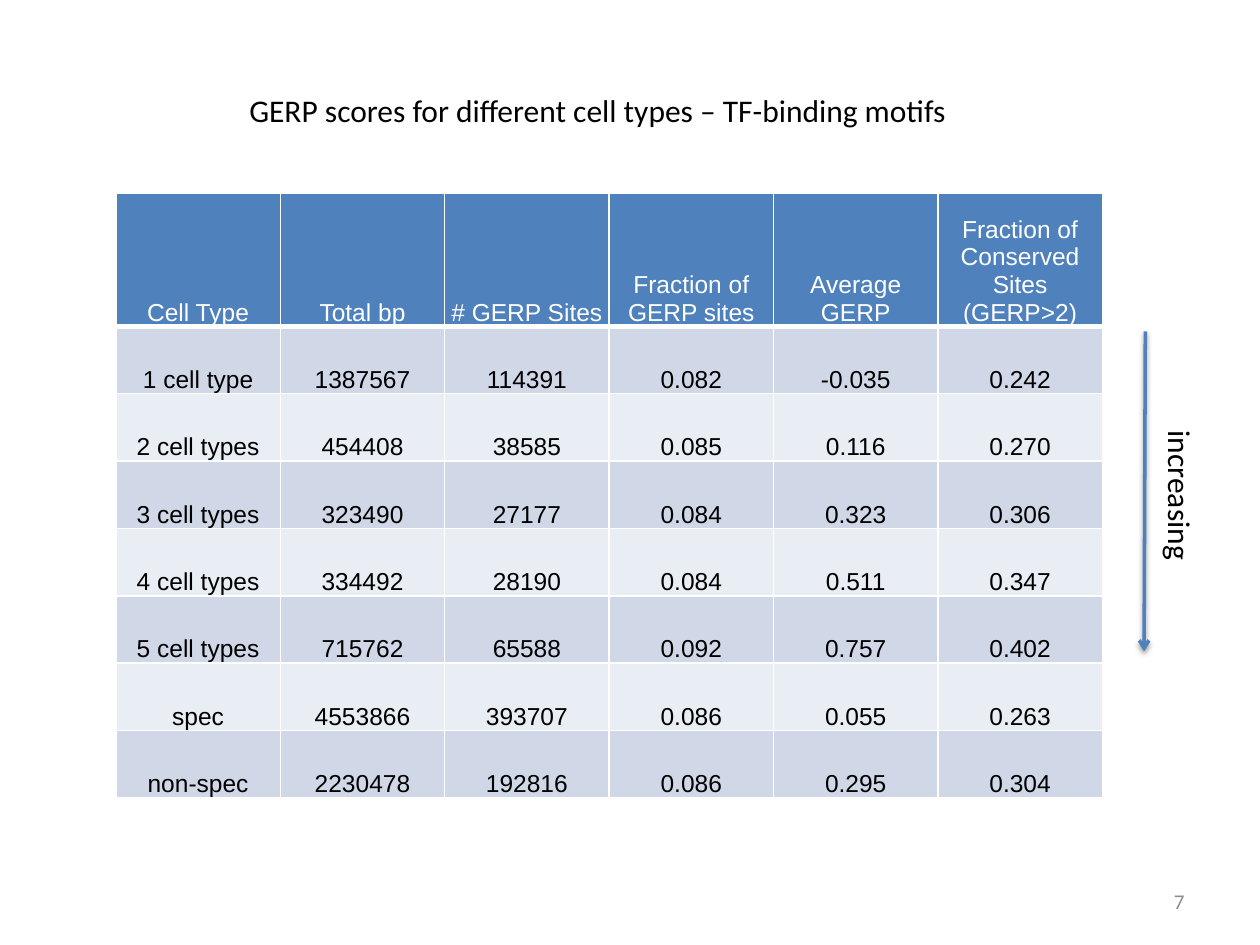
from dataclasses import dataclass

from lxml import etree
from pptx import Presentation
from pptx import util as u
from pptx.dml.color import RGBColor
from pptx.enum import shapes, text
from pptx.oxml import parse_xml
from pptx.oxml.ns import nsdecls, qn


@dataclass(frozen=True)
class Theme:
    accent: str = "4F81BD"
    bands: tuple = ("D0D8E8", "E9EDF4")
    white: str = "FFFFFF"
    black: str = "000000"
    grey: str = "8C8C8C"
    body_font: str = "Calibri"
    table_font: str = "Arial"
    label_size: int = 18
    table_size: int = 14
    number_size: int = 12


theme = Theme()
presentation = Presentation()
presentation.slide_width, presentation.slide_height = u.Inches(10), u.Inches(7.5)
slide = presentation.slides.add_slide(presentation.slide_layouts[6])


def add_run(paragraph, content, font, size, color):
    run = paragraph.add_run()
    run.text = content
    run.font.name, run.font.size = font, u.Pt(size)
    run.font.bold = False
    run.font.color.rgb = RGBColor.from_string(color)


def add_label(content, left, top, width, size, color, wrap=False):
    shape = slide.shapes.add_textbox(*map(u.Inches, (left, top, width, 0.4)))
    shape.text_frame.word_wrap = wrap
    add_run(shape.text_frame.paragraphs[0], content, theme.body_font, size, color)
    return shape


# Page number
number = add_label("7", 7.17, 6.95, 2.33, theme.number_size, theme.grey, wrap=True)
number.text_frame.vertical_anchor = text.MSO_ANCHOR.MIDDLE
number.text_frame.paragraphs[0].alignment = text.PP_ALIGN.RIGHT

# Table of GERP scores
rows = [
    ("Cell Type", "Total bp", "# GERP Sites", "Fraction of GERP sites",
     "Average GERP", "Fraction of Conserved Sites (GERP>2)"),
    ("1 cell type", "1387567", "114391", "0.082", "-0.035", "0.242"),
    ("2 cell types", "454408", "38585", "0.085", "0.116", "0.270"),
    ("3 cell types", "323490", "27177", "0.084", "0.323", "0.306"),
    ("4 cell types", "334492", "28190", "0.084", "0.511", "0.347"),
    ("5 cell types", "715762", "65588", "0.092", "0.757", "0.402"),
    ("spec", "4553866", "393707", "0.086", "0.055", "0.263"),
    ("non-spec", "2230478", "192816", "0.086", "0.295", "0.304"),
]
table_width, header_height, row_height = 7.83, 1.06, 0.535
table_height = header_height + row_height * (len(rows) - 1)
table = slide.shapes.add_table(
    len(rows), len(rows[0]),
    *map(u.Inches, (0.92, 1.53, table_width, table_height))).table
for column in table.columns:
    column.width = u.Inches(table_width / len(rows[0]))

for row_index, values in enumerate(rows):
    is_header = row_index == 0
    table.rows[row_index].height = u.Inches(header_height if is_header else row_height)
    fill = theme.accent if is_header else theme.bands[(row_index - 1) % 2]
    color = theme.white if is_header else theme.black
    for column_index, value in enumerate(values):
        cell = table.cell(row_index, column_index)
        cell.vertical_anchor = text.MSO_ANCHOR.BOTTOM
        cell.margin_left = cell.margin_right = cell.margin_top = u.Inches(0.01)
        cell.margin_bottom = 0
        # White rules, heavier between header and body
        for side in "LRTB":
            heavy = (row_index, side) in ((0, "B"), (1, "T"))
            cell._tc.get_or_add_tcPr().append(parse_xml(
                f'<a:ln{side} {nsdecls("a")} w="{u.Pt(3 if heavy else 1)}"><a:solidFill>'
                f'<a:srgbClr val="{theme.white}"/></a:solidFill></a:ln{side}>'))
        cell.fill.solid()
        cell.fill.fore_color.rgb = RGBColor.from_string(fill)
        paragraph = cell.text_frame.paragraphs[0]
        paragraph.alignment = text.PP_ALIGN.CENTER
        add_run(paragraph, value, theme.table_font, theme.table_size, color)

# Title
add_label("GERP scores for different cell types – TF-binding motifs",
          1.88, 0.67, 5.79, theme.label_size, theme.black)

# Downward arrow with a soft shadow
arrow = slide.shapes.add_connector(
    shapes.MSO_CONNECTOR.STRAIGHT, *map(u.Inches, (9.09, 2.63, 9.08, 5.17)))
arrow.line.color.rgb = RGBColor.from_string(theme.accent)
arrow.line.width = u.Pt(2)
etree.SubElement(arrow.line._get_or_add_ln(), qn("a:tailEnd"), type="arrow")
arrow._element.spPr.append(parse_xml(
    f'<a:effectLst {nsdecls("a")}><a:outerShdw blurRad="{u.Pt(3.1)}" dist="{u.Pt(1.6)}" '
    f'dir="5400000" rotWithShape="0"><a:srgbClr val="{theme.black}">'
    '<a:alpha val="38000"/></a:srgbClr></a:outerShdw></a:effectLst>'))

# Arrow label, reading downwards
direction = add_label("increasing", 8.75, 3.74, 1.24, theme.label_size, theme.black, wrap=True)
direction.rotation = 90

presentation.save("out.pptx")
